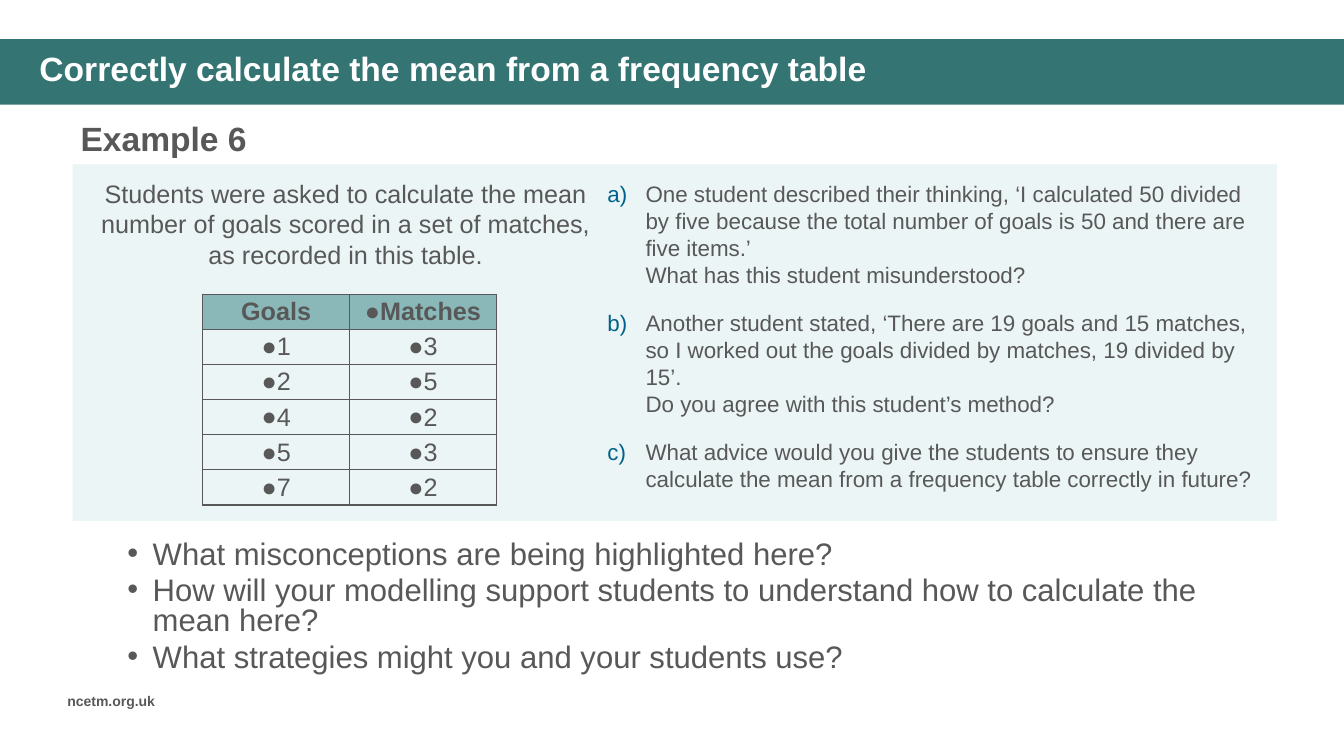
"""Build the Example 6 slide on finding the mean from a frequency table."""
from lxml.etree import SubElement
from pptx import Presentation
from pptx.dml.color import RGBColor
from pptx.enum.shapes import MSO_SHAPE as Preset
from pptx.enum.text import MSO_ANCHOR as Anchor, MSO_AUTO_SIZE as AutoSize, PP_ALIGN as Align
from pptx.oxml.ns import qn
from pptx.util import Cm, Pt

INK, TEAL, PALE, HEADER, BLUE = "585858", "347574", "EBF5F5", "8AB8B8", "00628C"


def paint(colour_format, colour):
    colour_format.rgb = RGBColor.from_string(colour)


def fill(target, colour):
    target.fill.solid()
    paint(target.fill.fore_color, colour)


def add_bullet(paragraph, mark, indent, colour):
    properties = paragraph._p.get_or_add_pPr()
    properties.set("marL", str(Cm(indent[0])))
    properties.set("indent", str(Cm(indent[1])))
    if colour:
        holder = SubElement(properties, qn("a:buClr"))
        SubElement(holder, qn("a:srgbClr"), val=colour)
    if mark == "a)":
        SubElement(properties, qn("a:buAutoNum"), type="alphaLcParenR")
    else:
        SubElement(properties, qn("a:buFont"), typeface="Arial")
        SubElement(properties, qn("a:buChar"), char=mark)


def write(frame, *texts, size=18, colour=INK, bold=False, align=Align.LEFT, bullet=None,
          indent=(0, 0), bullet_colour=None, before=0, after=0, spacing=None):
    for index, text in enumerate(texts):
        paragraph = frame.add_paragraph() if index else frame.paragraphs[0]
        paragraph.text = text
        paragraph.alignment = align
        paragraph.space_before = Pt(before if index else 0)
        paragraph.space_after = Pt(after)
        if spacing:
            paragraph.line_spacing = spacing
        if bullet:
            add_bullet(paragraph, bullet, indent, bullet_colour)
        for line_break in paragraph._p.findall(qn("a:br")):
            SubElement(line_break, qn("a:rPr"), sz=str(size * 100))
        for run in paragraph.runs:
            run.font.name, run.font.size, run.font.bold = "Arial", Pt(size), bold
            paint(run.font.color, colour)


class Lesson:
    """Holds the current slide and draws its elements in the lesson style."""

    def __init__(self, slide):
        self.slide = slide
        self.shapes = slide.shapes

    def panel(self, box, colour):
        panel = self.shapes.add_shape(Preset.RECTANGLE, *map(Cm, box))
        panel.shadow.inherit = False
        fill(panel, colour)
        panel.line.fill.background()

    def title(self, box, text):
        title = self.shapes.title
        title.left, title.top, title.width, title.height = map(Cm, box)
        self.shapes._spTree.append(title._element)
        frame = title.text_frame
        frame.auto_size = AutoSize.NONE
        frame.vertical_anchor = Anchor.MIDDLE
        write(frame, text, size=24, colour="FFFFFF", bold=True, spacing=0.9)

    def text(self, box, *texts, anchor=Anchor.TOP, **style):
        frame = self.shapes.add_textbox(*map(Cm, box)).text_frame
        frame.word_wrap = True
        frame.vertical_anchor = anchor
        write(frame, *texts, **style)

    def table(self, box, rows):
        table = self.shapes.add_table(len(rows), len(rows[0]), *map(Cm, box)).table
        for row_index, row in enumerate(rows):
            table.rows[row_index].height = Cm(box[3] / len(rows))
            for column_index, value in enumerate(row):
                cell = table.cell(row_index, column_index)
                heading = row_index == 0
                cell.margin_left = cell.margin_right = Cm(0.18)
                cell.margin_top = cell.margin_bottom = 0
                cell.vertical_anchor = Anchor.MIDDLE
                self.borders(cell)
                fill(cell, HEADER if heading else PALE)
                write(cell.text_frame, value, bold=heading, align=Align.CENTER,
                      bullet=None if value == "Goals" else "●")

    def borders(self, cell):
        properties = cell._tc.get_or_add_tcPr()
        for side in ("lnL", "lnR", "lnT", "lnB"):
            line = SubElement(properties, qn(f"a:{side}"), w=str(Pt(1)))
            SubElement(SubElement(line, qn("a:solidFill")), qn("a:srgbClr"), val=INK)


def main():
    deck = Presentation()
    deck.slide_width, deck.slide_height = Cm(33.87), Cm(19.05)
    lesson = Lesson(deck.slides.add_slide(deck.slide_layouts[5]))

    lesson.panel((0, 0.99, 33.87, 1.65), TEAL)
    lesson.title((0.74, 1.19, 29.41, 1.19), "Correctly calculate the mean from a frequency table")
    lesson.text((1.45, 17.32, 3.07, 0.69), "ncetm.org.uk", size=10, bold=True)
    lesson.text((1.78, 2.84, 16.92, 1.27), "Example 6", size=24, bold=True)

    lesson.panel((1.83, 4.14, 30.35, 8.99), PALE)
    lesson.text(
        (2.13, 4.37, 13.16, 2.57),
        "Students were asked to calculate the mean number of goals scored in a set of matches, "
        "as recorded in this table.",
        align=Align.CENTER, after=4)
    lesson.table((5.11, 7.42, 7.4, 5.31), [
        ("Goals", "Matches"), ("1", "3"), ("2", "5"), ("4", "2"), ("5", "3"), ("7", "2")])
    lesson.text(
        (15.06, 4.42, 17.07, 8.23),
        "One student described their thinking, ‘I calculated 50 divided by five because the "
        "total number of goals is 50 and there are five items.’\n"
        "What has this student misunderstood?",
        "Another student stated, ‘There are 19 goals and 15 matches, so I worked out the goals "
        "divided by matches, 19 divided by 15’.\n"
        "Do you agree with this student’s method?",
        "What advice would you give the students to ensure they calculate the mean from a "
        "frequency table correctly in future?",
        size=16, bullet="a)", indent=(0.96, -0.96), bullet_colour=BLUE, before=3.2, after=12)

    lesson.text(
        (1.7, 13.51, 30.89, 3.61),
        "What misconceptions are being highlighted here?",
        "How will your modelling support students to understand how to calculate the mean here?",
        "What strategies might you and your students use?",
        anchor=Anchor.MIDDLE, size=22.2, bullet="•", indent=(1.9, -0.64), before=5, spacing=0.8)
    deck.save("out.pptx")


if __name__ == "__main__":
    main()
